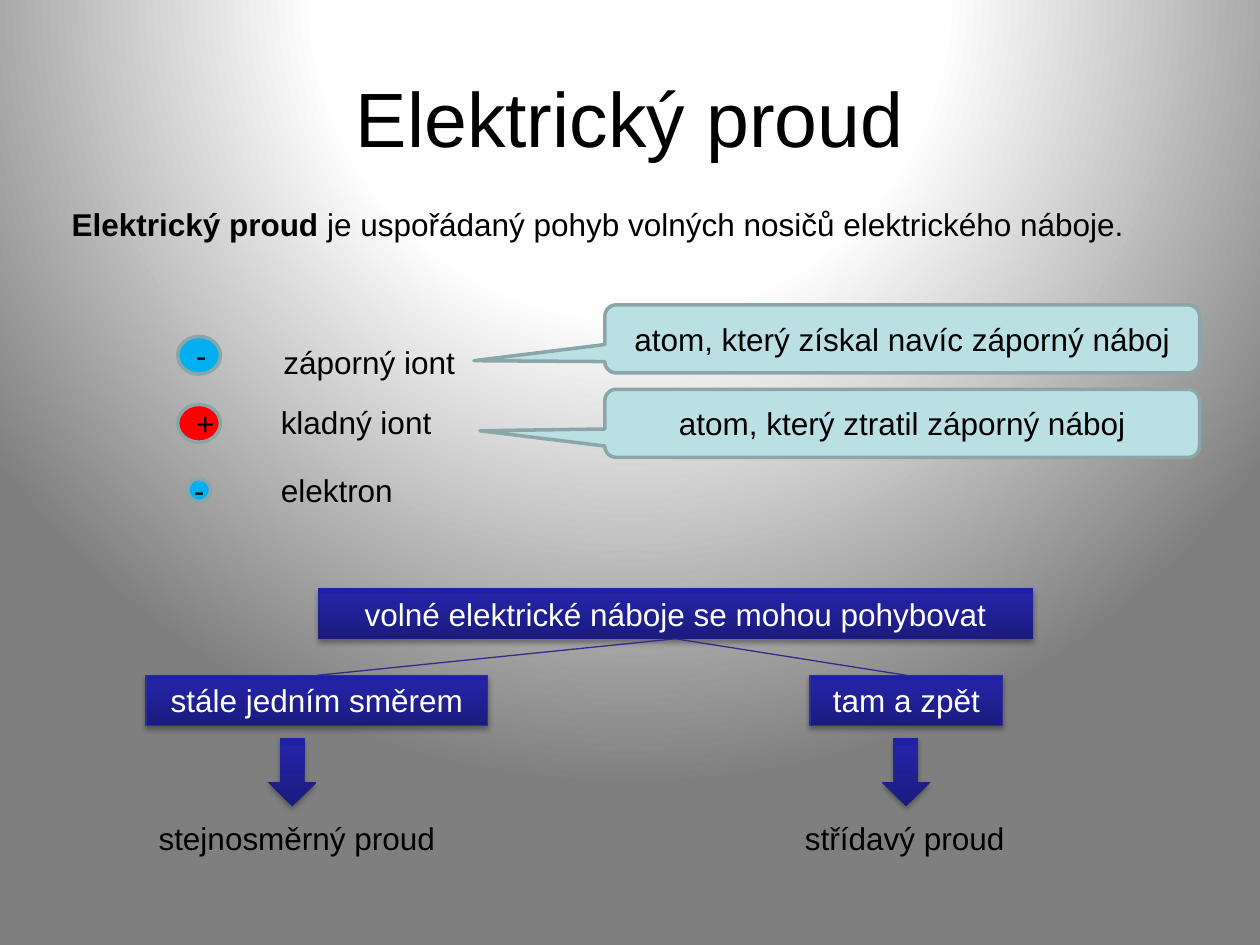
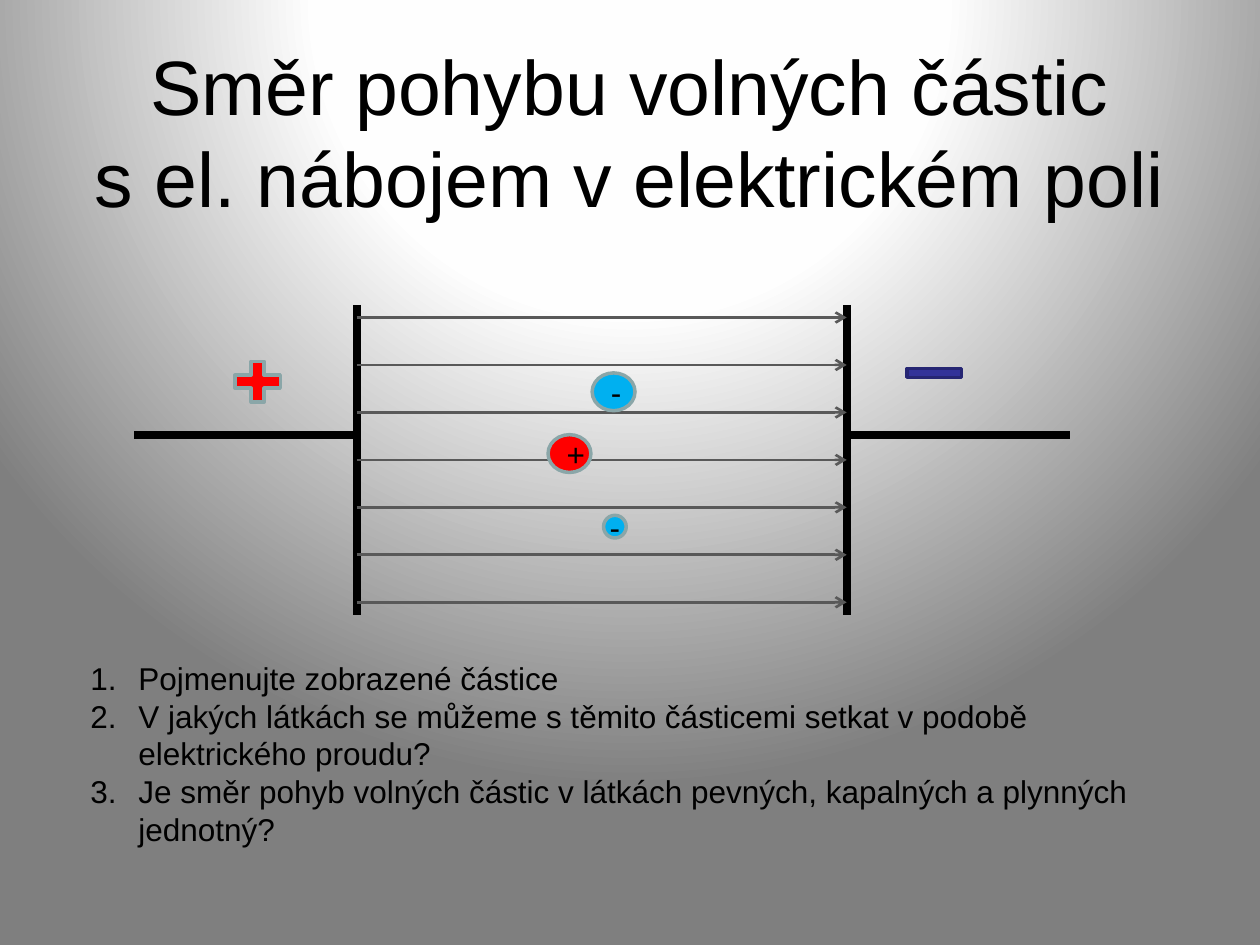
from lxml import etree
from pptx import Presentation
from pptx.dml.color import RGBColor
from pptx.enum import shapes, text
from pptx.oxml import parse_xml
from pptx.oxml.ns import nsdecls, qn
from pptx.util import Inches, Pt

FONT = "Arial"
BLACK, WHITE, RED, SKY = "000000", "FFFFFF", "FF0000", "00B0F0"
RIM, PALE, NAVY = "8AA6A8", "BBE0E3", "2D2D8A"
GLOSS = [(0, "1B1B7E"), (80, "2323A3"), (100, "2020A6")]
GLOW = [(0, "FFFFFF"), (40, "FEFEFE"), (100, "7F7F7F")]
RADIAL = ('<a:path path="circle"><a:fillToRect l="50000" t="-80000" '
          'r="50000" b="180000"/></a:path>')
UPWARD = '<a:lin ang="16200000" scaled="0"/>'
SHADE = (f'<a:outerShdw {nsdecls("a")} blurRad="40000" dist="23000" dir="5400000" '
         'rotWithShape="0"><a:srgbClr val="000000"><a:alpha val="35000"/>'
         '</a:srgbClr></a:outerShdw>')
KIND = shapes.MSO_SHAPE
MID, LEFT = text.PP_ALIGN.CENTER, text.PP_ALIGN.LEFT
TOP, CENTRE = text.MSO_ANCHOR.TOP, text.MSO_ANCHOR.MIDDLE
rgb = RGBColor.from_string

# Gradient fills: the page glow and the glossy navy of the boxes
grads = {}
for name, stops, way in [("glow", GLOW, RADIAL), ("gloss", GLOSS, UPWARD)]:
    marks = "".join(f'<a:gs pos="{pos * 1000}"><a:srgbClr val="{tone}"/></a:gs>'
                    for pos, tone in stops)
    grads[name] = (f'<a:gradFill {nsdecls("a")} rotWithShape="1"><a:gsLst>{marks}'
                   f'</a:gsLst>{way}</a:gradFill>')


def draw(slide, kind, box, words=(), fill=None, edge=None, width=2, ink=BLACK,
         align=MID, anchor=CENTRE, wrap=True, inset=None):
    """Add a shape, or a text box if kind is None; ** marks bold words."""
    place = [Inches(side) for side in box]
    if kind is None:
        item = slide.shapes.add_textbox(*place)
    else:
        item = slide.shapes.add_shape(kind, *place)
        item.shadow.inherit = False
        item.fill.solid()
        if fill == "gloss":
            props = item.element.spPr
            props.replace(props.find(qn("a:solidFill")), parse_xml(grads["gloss"]))
            props.find(qn("a:effectLst")).append(parse_xml(SHADE))
        else:
            item.fill.fore_color.rgb = rgb(fill)
        if edge:
            item.line.color.rgb = rgb(edge)
            item.line.width = Pt(width)
        else:
            item.line.fill.background()
    frame = item.text_frame
    frame.word_wrap, frame.vertical_anchor = wrap, anchor
    if inset is not None:
        for side in ("left", "top", "right", "bottom"):
            setattr(frame, f"margin_{side}", Inches(inset))
    for row, line in enumerate(words):
        para = frame.add_paragraph() if row else frame.paragraphs[0]
        para.alignment = align
        for part, piece in enumerate(line.split("**")):
            if piece:
                run = para.add_run()
                run.text = piece
                look = {"name": FONT, "size": Pt(18), "bold": part % 2 == 1}
                for key, value in look.items():
                    setattr(run.font, key, value)
                run.font.color.rgb = rgb(ink)
    return item


def link(slide, start, end, tone, width, arrow=False):
    line = slide.shapes.add_connector(
        shapes.MSO_CONNECTOR.STRAIGHT, *[Inches(n) for n in start + end])
    line.line.color.rgb = rgb(tone)
    line.line.width = Pt(width)
    if arrow:
        etree.SubElement(line.line._get_or_add_ln(), qn("a:tailEnd"), type="arrow")
    etree.SubElement(line.element.spPr, qn("a:effectLst"))
    return line


deck = Presentation()
deck.slide_width, deck.slide_height = Inches(10), Inches(7.5)
master = deck.slide_master
master.background.fill.solid()
back = master.element.find(".//" + qn("p:bgPr"))
back.replace(back.find(qn("a:solidFill")), parse_xml(grads["glow"]))

# Titles
pages = []
for height, lines in [
        (1.25, ["Elektrický proud"]),
        (1.48, ["Směr pohybu volných částic", "s el. nábojem v elektrickém poli"])]:
    page = deck.slides.add_slide(deck.slide_layouts[5])
    title = page.shapes.title
    title.left, title.top = Inches(0.5), Inches(0.3)
    title.width, title.height = Inches(9), Inches(height)
    title.text_frame.vertical_anchor = CENTRE
    para = title.text_frame.paragraphs[0]
    para.alignment = MID
    for row, line in enumerate(lines):
        if row:
            para.add_line_break()
        run = para.add_run()
        run.text = line
        run.font.name, run.font.size = FONT, Pt(44)
        run.font.color.rgb = rgb(BLACK)
    pages.append(page)
flow, field = pages

# Field between two charged plates
plus, minus, top, foot, mid = 2.83, 6.72, 2.42, 4.88, 3.45
for x, far in [(plus, 1.06), (minus, 8.49)]:
    link(field, (x, top), (x, foot), BLACK, 4.5)
    link(field, (x, mid), (far, mid), BLACK, 4.5)
draw(field, KIND.MATH_PLUS, (1.8, 2.81, 0.49, 0.44), fill=RED, edge=RIM)
draw(field, KIND.MATH_MINUS, (7.12, 2.81, 0.59, 0.3), fill="333399", edge="262673")
count, first, last = 7, 2.52, 4.78
for i in range(count):
    y = first + i * (last - first) / (count - 1)
    link(field, (plus, y), (minus, y), "595959", 1.5, arrow=True)

# Particles on both slides: negative ion, positive ion, electron
ions = [("-", SKY, 0.34, 0.3, None), ("+", RED, 0.34, 0.3, None),
        ("-", SKY, 0.18, 0.18, 0)]
for page, spots in [(flow, [(1.41, 2.67), (1.41, 3.21), (1.49, 3.8)]),
                    (field, [(4.7, 2.96), (4.35, 3.45), (4.79, 4.09)])]:
    for (sign, tone, wide, high, inset), spot in zip(ions, spots):
        draw(page, KIND.OVAL, (*spot, wide, high), [sign], tone, RIM, inset=inset)

# Definition and particle names
plain = {"align": LEFT, "anchor": TOP}
draw(flow, None, (0.47, 1.58, 9.06, 0.4),
     ["**Elektrický proud** je uspořádaný pohyb volných nosičů elektrického náboje."],
     **plain)
for x, y, name in [(2.15, 2.67, "záporný iont"), (2.13, 3.15, "kladný iont"),
                   (2.13, 3.69, "elektron")]:
    draw(flow, None, (x, y, 3.05, 0.4), [name], **plain)
for y, tip, note in [
        (2.42, (-0.72, 0.32), "atom, který získal navíc záporný náboj"),
        (3.09, (-0.71, 0.11), "atom, který ztratil záporný náboj")]:
    call = draw(flow, KIND.ROUNDED_RECTANGULAR_CALLOUT, (4.8, y, 4.72, 0.54),
                [note], PALE, RIM)
    for i, value in enumerate(tip):
        call.adjustments[i] = value

# Tree of the two kinds of current
gloss = {"fill": "gloss", "ink": WHITE, "anchor": TOP}
root = draw(flow, KIND.RECTANGLE, (2.52, 4.67, 5.68, 0.4),
            ["volné elektrické náboje se mohou pohybovat"], **gloss)
for x, wide, way, arrow, end, span, kind in [
        (1.16, 2.71, "stále jedním směrem", 2.13, 1.16, 2.42, "stejnosměrný proud"),
        (6.43, 1.53, "tam a zpět", 7, 6.29, 1.8, "střídavý proud")]:
    leaf = draw(flow, KIND.RECTANGLE, (x, 5.36, wide, 0.4), [way],
                edge="2F2F98", width=0.75, **gloss)
    draw(flow, KIND.DOWN_ARROW, (arrow, 5.86, 0.38, 0.54), fill="gloss")
    draw(flow, None, (end, 6.45, span, 0.4), [kind], wrap=False, **plain)
    branch = link(flow, (5.36, 5.07), (x + wide / 2, 5.36), NAVY, 0.75)
    branch.begin_connect(root, 2)
    branch.end_connect(leaf, 0)

# Numbered questions
quiz = draw(field, None, (0.62, 5.18, 8.66, 1.92), [
    "Pojmenujte zobrazené částice",
    "V jakých látkách se můžeme s těmito částicemi setkat v podobě elektrického proudu?",
    "Je směr pohyb volných částic v látkách pevných, kapalných a plynných jednotný?",
], **plain)
hang = Inches(0.38)
for para in quiz.text_frame.paragraphs:
    props = para._p.get_or_add_pPr()
    props.set("marL", str(hang))
    props.set("indent", str(-hang))
    etree.SubElement(props, qn("a:buFont"), typeface=FONT)
    etree.SubElement(props, qn("a:buAutoNum"), type="arabicPeriod")

deck.save("out.pptx")
